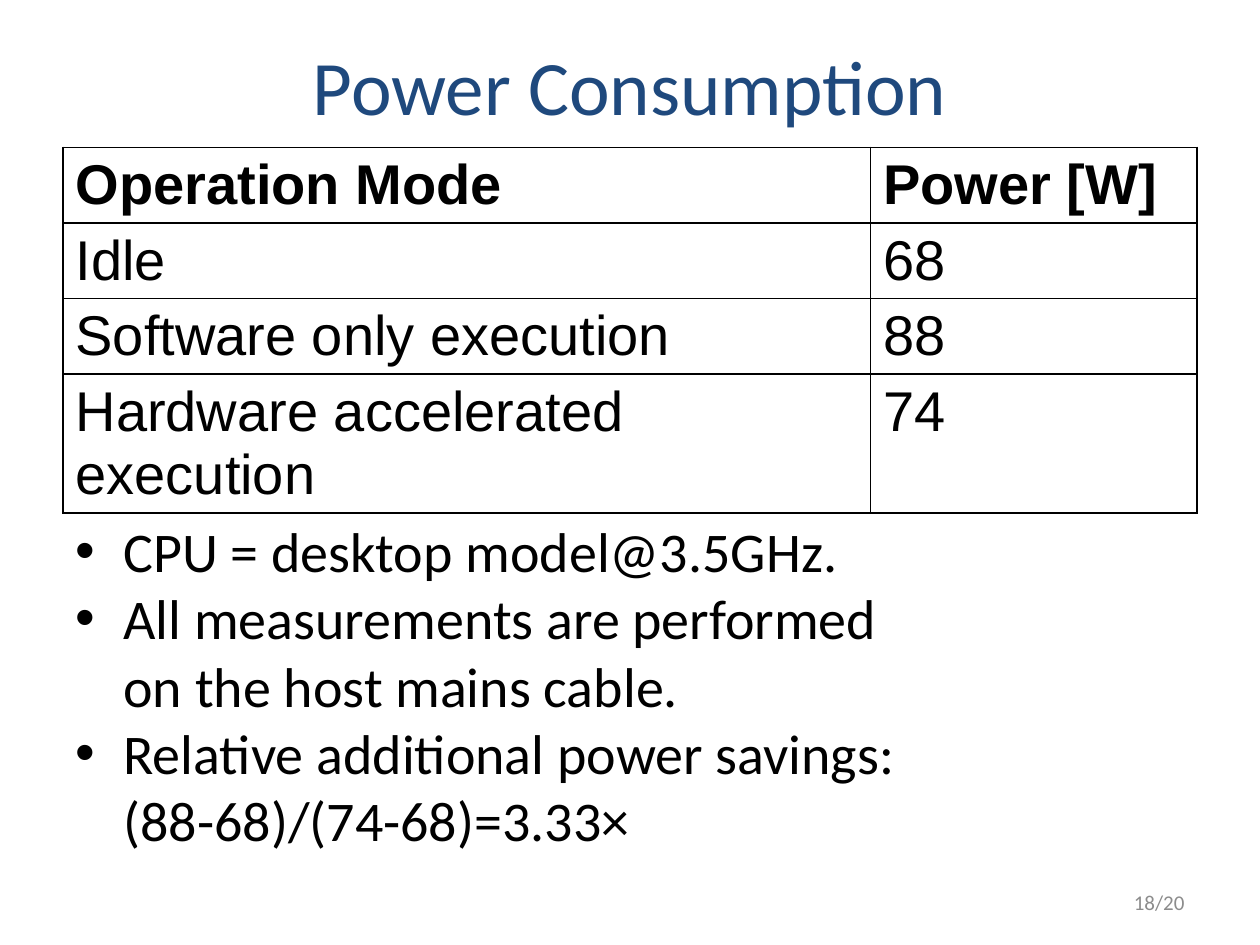
from lxml.etree import SubElement as Sub
from pptx import Presentation
from pptx.dml.color import RGBColor as Rgb
from pptx.enum.text import MSO_ANCHOR as Anchor, MSO_AUTO_SIZE as Fit, PP_ALIGN as Align
from pptx.oxml import parse_xml
from pptx.oxml.ns import nsdecls, qn
from pptx.util import Inches, Pt

WIDE, HIGH = Inches(10), Inches(7.5)
EDGE, SPAN = 0.05, 0.9  # side margin and content width, as shares of the slide
INK = {"title": "1F497D", "text": "000000", "page": "8C8C8C", "cell": "FFFFFF"}
ROWS = [
    ("Operation Mode", "Power [W]"),
    ("Idle", "68"),
    ("Software only execution", "88"),
    ("Hardware accelerated execution", "74"),
]
NOTES = [
    ("•", ["CPU = desktop model@3.5GHz."]),
    ("•", ["All measurements are performed", "on the host mains cable."]),
    ("•", ["Relative additional power savings:"]),
    (None, ["(88-68)/(74-68)=3.33×"]),
]


def area(x, y, w, h):
    """Turn shares of the slide into lengths."""
    return int(x * WIDE), int(y * HIGH), int(w * WIDE), int(h * HIGH)


def place(shape, box):
    shape.left, shape.top, shape.width, shape.height = box


def write(para, text, size, ink, face="Calibri", bold=False):
    run = para.add_run()
    run.text = text
    font = run.font
    font.size, font.name, font.bold = Pt(size), face, bold
    font.color.rgb = Rgb.from_string(INK[ink])


def set_up(frame, anchor):
    frame.word_wrap = True
    frame.auto_size = Fit.NONE
    frame.vertical_anchor = anchor
    return frame.paragraphs[0]


def add_title(slide):
    title = slide.shapes.title
    place(title, area(EDGE, 0.04, SPAN, 0.1))
    para = set_up(title.text_frame, Anchor.MIDDLE)
    para.alignment = Align.CENTER
    write(para, "Power Consumption", 44, "title")


def rule(cell):
    """Draw a thin black line on each side of a cell."""
    props = cell._tc.get_or_add_tcPr()
    for i, side in enumerate("LRTB"):
        props.insert(i, parse_xml(
            f'<a:ln{side} {nsdecls("a")} w="12700"><a:solidFill>'
            f'<a:srgbClr val="{INK["text"]}"/></a:solidFill></a:ln{side}>'))


def add_grid(slide):
    box = Inches(0.5), Inches(1.17), Inches(9), Inches(2.9)
    grid = slide.shapes.add_table(len(ROWS), 2, *box).table
    for col, width in zip(grid.columns, (6.41, 2.59)):
        col.width = Inches(width)
    for row, height in zip(grid.rows, (0.6, 0.6, 0.6, 1.1)):
        row.height = Inches(height)
    for r, texts in enumerate(ROWS):
        for c, text in enumerate(texts):
            cell = grid.cell(r, c)
            cell.fill.solid()
            cell.fill.fore_color.rgb = Rgb.from_string(INK["cell"])
            rule(cell)
            write(cell.text_frame.paragraphs[0], text, 32, "text", "Arial", r == 0)


def indent(para, mark):
    """Hang the paragraph on a bullet, or only indent it without one."""
    props = para._p.get_or_add_pPr()
    step = Inches(0.38)
    props.set("marL", str(step))
    props.set("indent", str(-step if mark else 0))
    if mark:
        Sub(props, qn("a:buFont")).set("typeface", "Arial")
        Sub(props, qn("a:buChar")).set("char", mark)
    else:
        Sub(props, qn("a:buNone"))


def add_notes(slide):
    body = slide.placeholders[1]
    place(body, area(EDGE, 0.54, SPAN, 0.37))
    frame = body.text_frame
    first = set_up(frame, Anchor.TOP)
    for i, (mark, lines) in enumerate(NOTES):
        para = frame.add_paragraph() if i else first
        para.space_before = Pt(0)
        indent(para, mark)
        for n, line in enumerate(lines):
            if n:
                para.add_line_break()
            write(para, line, 32, "text")


def add_page(slide):
    box = slide.shapes.add_textbox(*area(0.72, 0.93, 0.23, 0.05))
    para = set_up(box.text_frame, Anchor.MIDDLE)
    para.alignment = Align.RIGHT
    write(para, "18/20", 12, "page")


def main():
    deck = Presentation()
    deck.slide_width, deck.slide_height = WIDE, HIGH
    slide = deck.slides.add_slide(deck.slide_layouts[1])
    add_title(slide)
    add_grid(slide)
    add_notes(slide)
    add_page(slide)
    deck.save("out.pptx")


if __name__ == "__main__":
    main()
